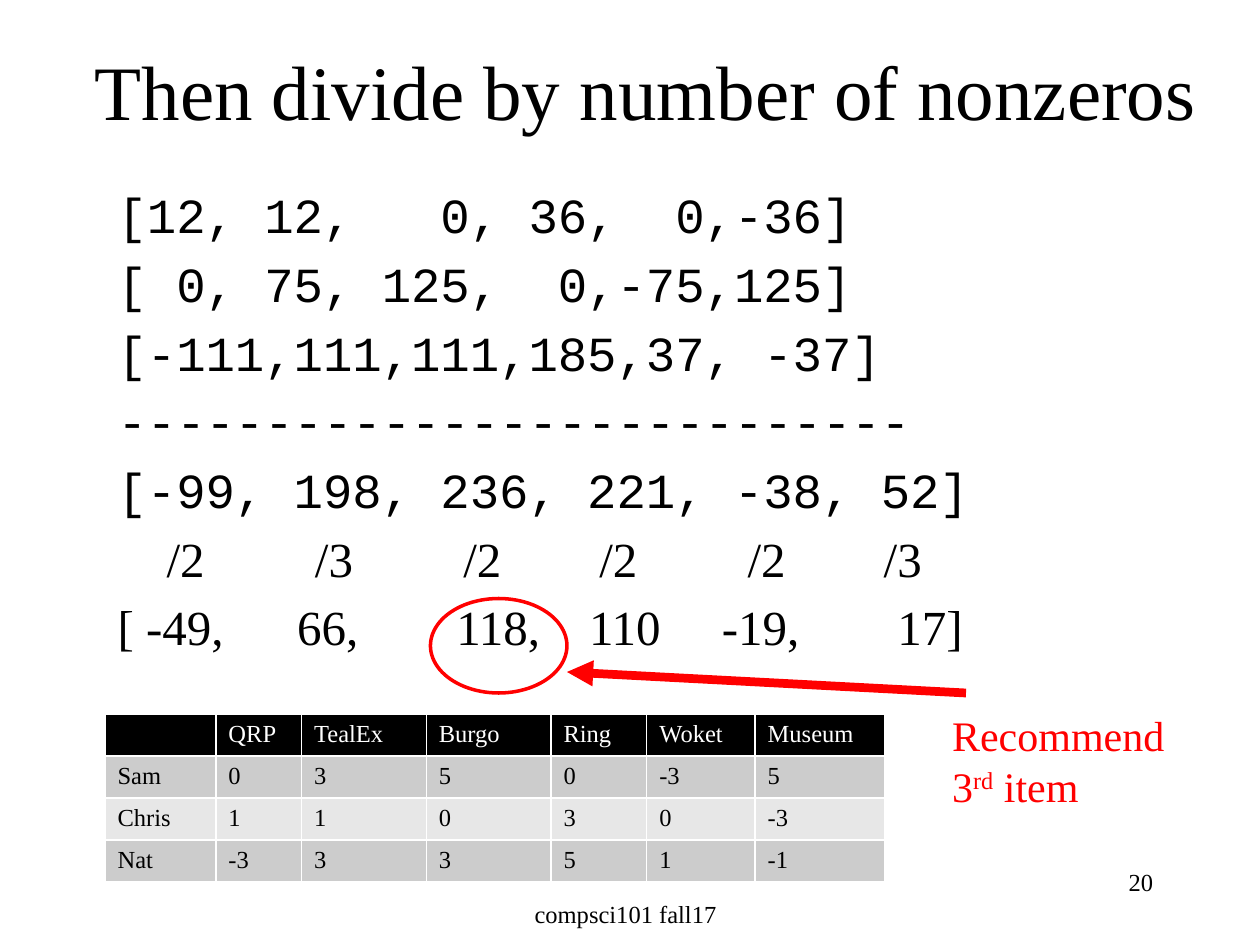
from dataclasses import dataclass

from lxml.etree import SubElement
from pptx import Presentation
from pptx.dml.color import RGBColor
from pptx.enum.shapes import MSO_CONNECTOR, MSO_SHAPE
from pptx.enum.text import MSO_ANCHOR, MSO_AUTO_SIZE, PP_ALIGN
from pptx.oxml.ns import qn
from pptx.util import Pt


@dataclass(frozen=True)
class Theme:
    """Colours, typefaces and type sizes of the slide."""
    black: RGBColor = RGBColor(0, 0, 0)
    white: RGBColor = RGBColor(255, 255, 255)
    red: RGBColor = RGBColor(255, 0, 0)
    bands: tuple = (RGBColor(0xCC, 0xCC, 0xCC), RGBColor(0xE7, 0xE7, 0xE7))
    serif: str = "Times New Roman"
    mono: str = "Courier New"
    title: int = 44
    body: int = 28
    callout: int = 24
    small: int = 14


THEME = Theme()

VECTORS = [
    "[12, 12,   0, 36,  0,-36]",
    "[ 0, 75, 125,  0,-75,125]",
    "[-111,111,111,185,37, -37]",
    "-" * 27,
    "[-99, 198, 236, 221, -38, 52]",
]
DIVISORS = ["/2", "/3", "/2", "/2", "/2", "/3"]
DIVISOR_GAPS = [63, 63, 56, 63, 56]
AVERAGES = ["[ -49,", "66,", "118,", "110", "-19,", "17]"]
AVERAGE_GAPS = [42, 56, 28, 35, 56]

RATINGS = [
    ["", "QRP", "TealEx", "Burgo", "Ring", "Woket", "Museum"],
    ["Sam", "0", "3", "5", "0", "-3", "5"],
    ["Chris", "1", "1", "0", "3", "0", "-3"],
    ["Nat", "-3", "3", "3", "5", "1", "-1"],
]
COLUMN_WIDTHS = [63.36, 48.96, 71.28, 71.28, 54.72, 61.92, 74.16]


def style(para, size, colour=THEME.black, name=THEME.serif):
    """Set the font of a whole paragraph."""
    font = para.font
    font.name, font.size, font.bold = name, Pt(size), False
    font.color.rgb = colour


def place(shape, left, top, width, height):
    """Move and size a shape, in points."""
    shape.left, shape.top = Pt(left), Pt(top)
    shape.width, shape.height = Pt(width), Pt(height)


def fill_title(page, text):
    """Write the slide title."""
    title = page.shapes.title
    place(title, 30, 6, 678, 90)
    frame = title.text_frame
    frame.text = text
    frame.auto_size = MSO_AUTO_SIZE.NONE
    frame.vertical_anchor = MSO_ANCHOR.MIDDLE
    frame.paragraphs[0].alignment = PP_ALIGN.CENTER
    style(frame.paragraphs[0], THEME.title)


def format_line(para, name, indent=0):
    """Make a paragraph an unbulleted line of the body."""
    para.space_before = Pt(5.6)
    properties = para._p.get_or_add_pPr()
    properties.set("marL", str(Pt(indent)))
    properties.set("indent", "0")
    SubElement(properties, qn("a:buNone"))
    style(para, THEME.body, name=name)


def add_spaced_line(frame, values, gaps, indent=0):
    """Add values set apart by single spaces widened to the gaps, in points."""
    para = frame.add_paragraph()
    format_line(para, THEME.serif, indent)
    space_width = THEME.body / 4
    para.add_run().text = values[0]
    for value, gap in zip(values[1:], gaps):
        span = para.add_run()
        span.text = " "
        span.font._element.set("spc", str(round((gap - space_width) * 100)))
        para.add_run().text = value


def fill_body(page):
    """Write the vectors, the divisors and the averages."""
    body = page.placeholders[1]
    place(body, 60, 102, 612, 408)
    frame = body.text_frame
    frame.auto_size = MSO_AUTO_SIZE.NONE
    frame.text = "\n".join(VECTORS)
    for para in frame.paragraphs:
        format_line(para, THEME.mono)
    add_spaced_line(frame, DIVISORS, DIVISOR_GAPS, indent=28)
    add_spaced_line(frame, AVERAGES, AVERAGE_GAPS)


def add_ring(page):
    """Draw the ring behind the text, around the best average."""
    ring = page.shapes.add_shape(MSO_SHAPE.OVAL, Pt(246), Pt(342), Pt(78), Pt(54))
    ring.shadow.inherit = False
    ring.fill.solid()
    ring.fill.fore_color.rgb = THEME.white
    ring.line.color.rgb = THEME.red
    ring.line.width = Pt(2)
    page.shapes._spTree.insert(2, ring._element)


def add_ratings(page):
    """Add the table of ratings with a dark header and banded rows."""
    frame = page.shapes.add_table(len(RATINGS), len(COLUMN_WIDTHS),
                                  Pt(60), Pt(408), Pt(sum(COLUMN_WIDTHS)), Pt(96))
    table = frame.table
    for column, width in zip(table.columns, COLUMN_WIDTHS):
        column.width = Pt(width)
    for row, values in enumerate(RATINGS):
        fill = THEME.bands[(row - 1) % 2] if row else THEME.black
        colour = THEME.black if row else THEME.white
        for column, value in enumerate(values):
            cell = table.cell(row, column)
            cell.fill.solid()
            cell.fill.fore_color.rgb = fill
            cell.text = value
            style(cell.text_frame.paragraphs[0], THEME.small, colour)


def add_arrow(page):
    """Point from the recommendation to the ring."""
    arrow = page.shapes.add_connector(MSO_CONNECTOR.STRAIGHT,
                                      Pt(552), Pt(396), Pt(324), Pt(384))
    arrow.line.color.rgb = THEME.red
    arrow.line.width = Pt(5)
    SubElement(arrow.line._get_or_add_ln(), qn("a:tailEnd"), type="triangle")
    SubElement(arrow._element.spPr, qn("a:effectLst"))


def add_text(page, text, area, alignment):
    """Add a small line of text in a box."""
    box = page.shapes.add_textbox(*map(Pt, area))
    box.text_frame.word_wrap = True
    para = box.text_frame.paragraphs[0]
    para.text = text
    para.alignment = alignment
    style(para, THEME.small)


def add_recommendation(page):
    """Add the red recommendation with its raised ordinal."""
    box = page.shapes.add_textbox(Pt(537), Pt(402), Pt(137), Pt(65.5))
    frame = box.text_frame
    frame.word_wrap = False
    frame.auto_size = MSO_AUTO_SIZE.SHAPE_TO_FIT_TEXT
    frame.text = "Recommend"
    ordinal = frame.add_paragraph()
    for text, raised in (("3", False), ("rd", True), (" item", False)):
        span = ordinal.add_run()
        span.text = text
        if raised:
            span.font._element.set("baseline", "30000")
    for para in frame.paragraphs:
        style(para, THEME.callout, THEME.red)


def main():
    """Build the slide and save it."""
    deck = Presentation()
    deck.slide_width, deck.slide_height = Pt(720), Pt(540)
    page = deck.slides.add_slide(deck.slide_layouts[1])
    fill_title(page, "Then divide by number of nonzeros")
    fill_body(page)
    add_ring(page)
    add_ratings(page)
    add_arrow(page)
    add_recommendation(page)
    add_text(page, "compsci101 fall17", (243.5, 510, 228, 36), PP_ALIGN.CENTER)
    add_text(page, "20", (516, 492, 150, 36), PP_ALIGN.RIGHT)
    deck.save("out.pptx")


if __name__ == "__main__":
    main()
